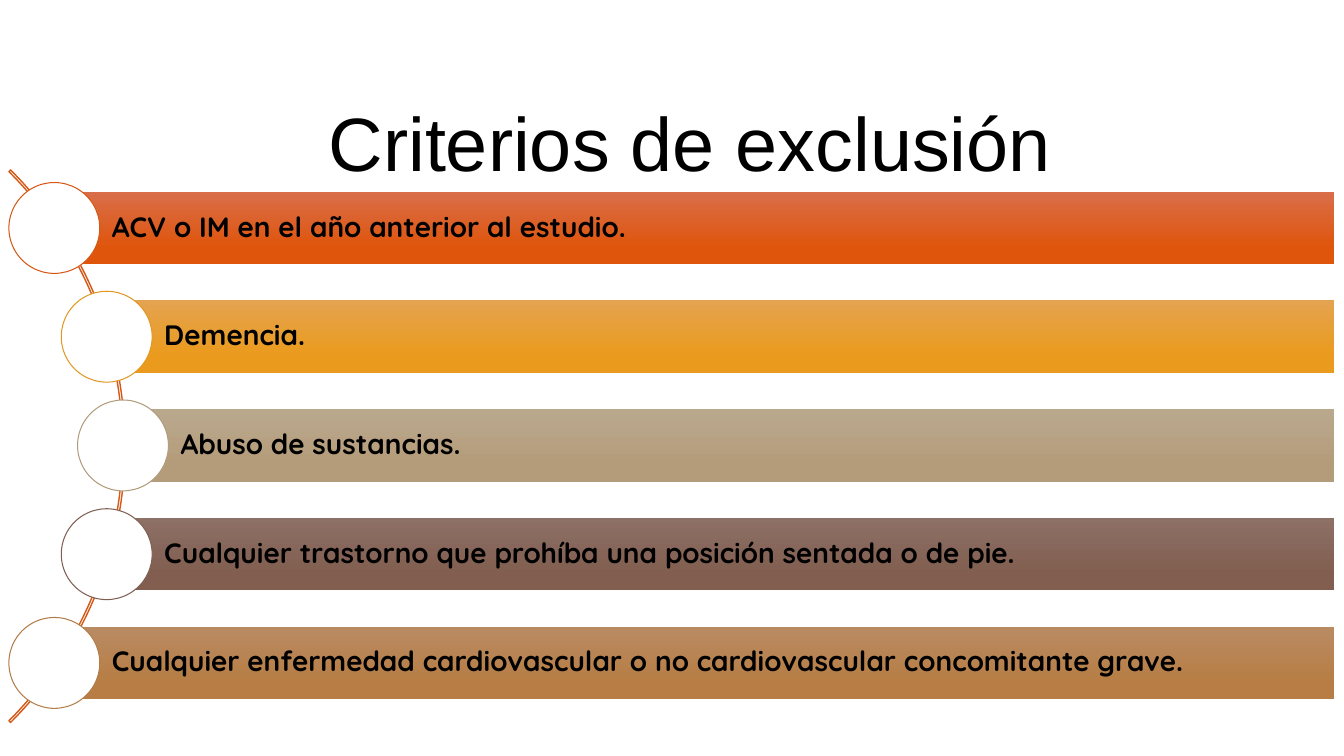
from pptx import Presentation
from pptx.dml.color import RGBColor
from pptx.enum.shapes import MSO_SHAPE as Shape
from pptx.enum.text import MSO_ANCHOR as Anchor, MSO_AUTO_SIZE as AutoSize, PP_ALIGN as Align
from pptx.util import Cm, Pt

CRITERIA = [
    ("ACV o IM en el año anterior al estudio.", 1.37, "D96E4A", "DF550C", "D55816"),
    ("Demencia.", 2.69, "E4A350", "EA9A1C", "E19825"),
    ("Abuso de sustancias.", 3.1, "BAA88D", "B49C7A", "B19C7D"),
    ("Cualquier trastorno que prohíba una posición sentada o de pie.",
     2.69, "8D7066", "815E50", "7F5F52"),
    ("Cualquier enfermedad cardiovascular o no cardiovascular concomitante grave.",
     1.37, "B98B63", "B77D44", "B27D49"),
]
FIRST_TOP, PITCH = 4.83, 2.74
BAR_HEIGHT, BAR_RIGHT = 1.83, 33.62
CIRCLE = 2.29


def color(value):
    return RGBColor.from_string(value)


class CriteriaSlide:
    """Draws titles, arcs, bars and circles in one style on the current slide."""

    def __init__(self, page):
        self.page = page
        self.title_font = "Arial"
        self.body_font = "Quicksand"
        self.text_color = "000000"

    def set_text(self, frame, text, font, size, bold, align):
        frame.text = text
        frame.word_wrap = True
        frame.vertical_anchor = Anchor.MIDDLE
        para = frame.paragraphs[0]
        para.alignment = align
        span = para.runs[0].font
        span.name, span.size, span.bold = font, Pt(size), bold
        span.color.rgb = color(self.text_color)
        return para

    def title(self, text, left, top, width, height):
        box = self.page.shapes.title
        box.left, box.top, box.width, box.height = map(Cm, (left, top, width, height))
        self.set_text(box.text_frame, text, self.title_font, 54, False, Align.CENTER)
        box.text_frame.auto_size = AutoSize.NONE

    def shape(self, kind, left, top, width, height):
        shape = self.page.shapes.add_shape(kind, *map(Cm, (left, top, width, height)))
        shape.shadow.inherit = False
        return shape

    def outline(self, shape, line, weight):
        shape.line.color.rgb = color(line)
        shape.line.width = Pt(weight)

    def arc(self, left, top, size, line):
        arc = self.shape(Shape.BLOCK_ARC, left, top, size, size)
        for index, value in enumerate((189, 27, 0.003)):
            arc.adjustments[index] = value
        arc.fill.background()
        self.outline(arc, line, 1)

    def bar(self, text, left, top, light, dark):
        bar = self.shape(Shape.RECTANGLE, left, top, BAR_RIGHT - left, BAR_HEIGHT)
        bar.line.fill.background()
        bar.fill.gradient()
        bar.fill.gradient_angle = 270
        for stop, position, value in zip(bar.fill.gradient_stops, (0, 0.78), (light, dark)):
            stop.position = position
            stop.color.rgb = color(value)
        frame = bar.text_frame
        frame.margin_left = Cm(1.45)
        frame.margin_top = frame.margin_right = frame.margin_bottom = Cm(0.15)
        para = self.set_text(frame, text, self.body_font, 20, True, Align.LEFT)
        para.line_spacing = 0.9

    def circle(self, center_x, center_y, line):
        circle = self.shape(Shape.OVAL, center_x - CIRCLE / 2, center_y - CIRCLE / 2,
                            CIRCLE, CIRCLE)
        circle.fill.solid()
        circle.fill.fore_color.rgb = color("FFFFFF")
        self.outline(circle, line, 0.75)


def main():
    deck = Presentation()
    deck.slide_width, deck.slide_height = Cm(33.87), Cm(19.05)
    slide = CriteriaSlide(deck.slides.add_slide(deck.slide_layouts[5]))
    slide.title("Criterios de exclusión", 7.01, 2.46, 20.75, 2.21)
    slide.arc(-16.54, 1.4, 19.69, "D55816")
    for row, (text, left, light, dark, line) in enumerate(CRITERIA):
        top = FIRST_TOP + row * PITCH
        slide.bar(text, left, top, light, dark)
        slide.circle(left, top + BAR_HEIGHT / 2, line)
    deck.save("out.pptx")


if __name__ == "__main__":
    main()
